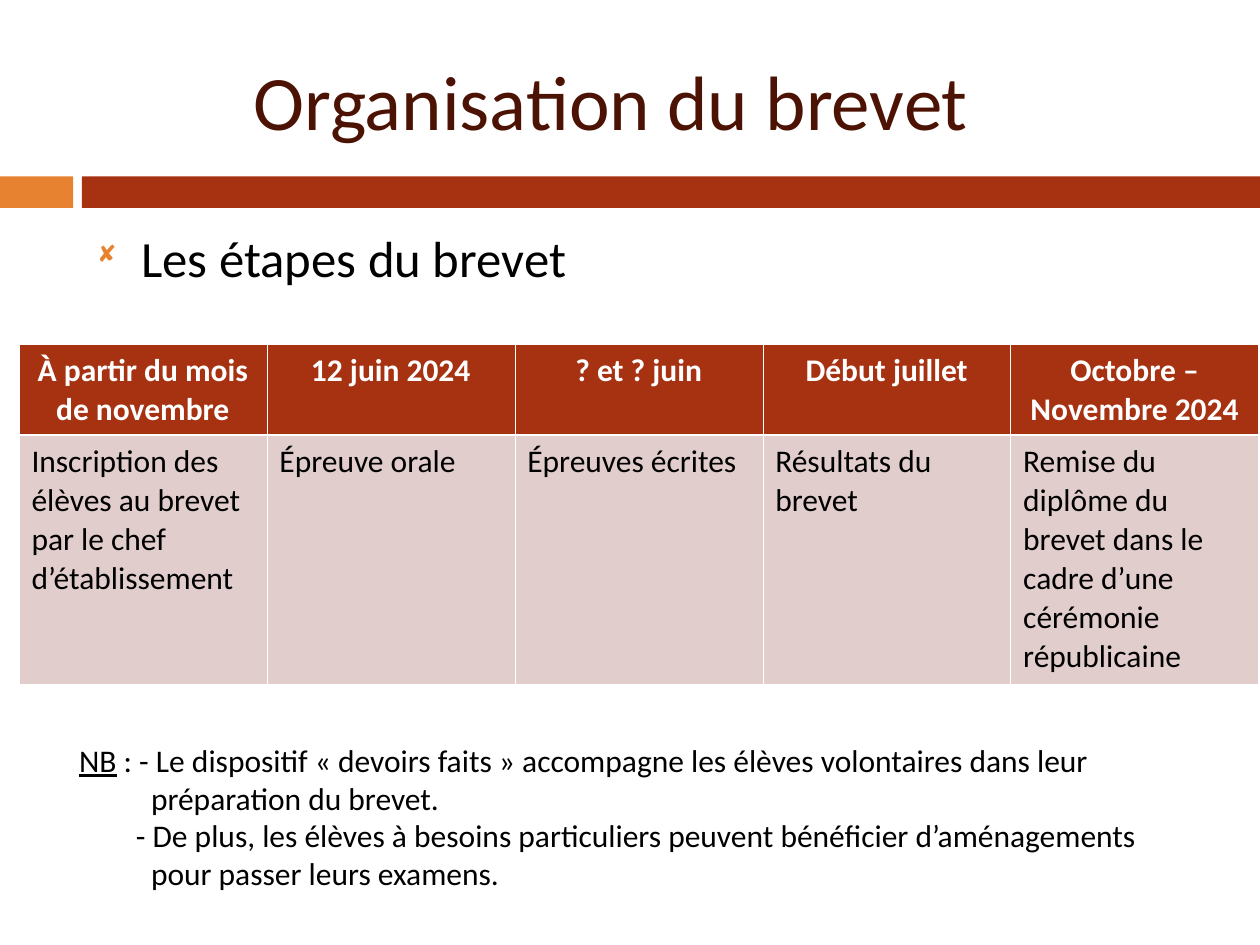
from dataclasses import dataclass

import pptx
import pptx.dml.color
import pptx.enum.shapes
import pptx.enum.text
import pptx.oxml
import pptx.oxml.ns
import pptx.util

ALIGN = pptx.enum.text.PP_ALIGN
NS = pptx.oxml.ns.nsdecls("a")


@dataclass(frozen=True)
class Theme:
    font: str = "Calibri"
    title_size: float = 44
    body_size: float = 29
    text_size: float = 18
    title: str = "4C1304"
    text: str = "000000"
    white: str = "FFFFFF"
    brick: str = "A63212"
    orange: str = "E68230"
    pale: str = "E1CDCC"
    thin: float = 0.23
    thick: float = 0.75


def rgb(value):
    return pptx.dml.color.RGBColor.from_string(value)


class Deck:
    """Style and current slide, on a grid of 100 columns by 75 rows."""

    def __init__(self, theme):
        self.theme = theme
        self.prs = pptx.Presentation()
        self.prs.slide_width = pptx.util.Inches(10)
        self.prs.slide_height = pptx.util.Inches(7.5)
        self.slide = self.prs.slides.add_slide(self.prs.slide_layouts[1])

    def cols(self, n):
        return round(self.prs.slide_width * n / 100)

    def rows(self, n):
        return round(self.prs.slide_height * n / 75)

    def box(self, x, y, w, h):
        return self.cols(x), self.rows(y), self.cols(w), self.rows(h)

    def style(self, p, size, color, bold=False, align=ALIGN.LEFT):
        p.alignment = align
        for r in p.runs:
            r.font.name = self.theme.font
            r.font.size = pptx.util.Pt(size)
            r.font.bold = bold
            r.font.color.rgb = rgb(color)

    def indent(self, p, left, first=0):
        """Indent a paragraph by grid columns."""
        pPr = p._p.get_or_add_pPr()
        pPr.set("marL", str(self.cols(left)))
        pPr.set("indent", str(self.cols(first)))

    def bar(self, x, y, w, h, color):
        kind = pptx.enum.shapes.MSO_SHAPE.RECTANGLE
        sp = self.slide.shapes.add_shape(kind, *self.box(x, y, w, h))
        sp.shadow.inherit = False
        sp.fill.solid()
        sp.fill.fore_color.rgb = rgb(color)
        sp.line.fill.background()

    def fill_placeholder(self, sp, box, text, anchor):
        sp.left, sp.top, sp.width, sp.height = self.box(*box)
        tf = sp.text_frame
        tf.text = text
        tf.auto_size = pptx.enum.text.MSO_AUTO_SIZE.NONE
        tf.vertical_anchor = anchor
        return tf.paragraphs[0]

    def title(self, text, box, left):
        p = self.fill_placeholder(self.slide.shapes.title, box, text,
                                  pptx.enum.text.MSO_ANCHOR.MIDDLE)
        self.style(p, self.theme.title_size, self.theme.title)
        self.indent(p, left)

    def bullet(self, text, box):
        p = self.fill_placeholder(self.slide.placeholders[1], box, text,
                                  pptx.enum.text.MSO_ANCHOR.TOP)
        self.style(p, self.theme.body_size, self.theme.text)
        self.indent(p, 3.5, -3.5)
        p.space_before = pptx.util.Pt(7)
        for xml in (f'<a:buClr {NS}><a:srgbClr val="{self.theme.orange}"/></a:buClr>',
                    f'<a:buSzPct {NS} val="60000"/>',
                    f'<a:buFont {NS} typeface="Wingdings"/>',
                    f'<a:buChar {NS} char="◻"/>'):
            p._p.pPr.append(pptx.oxml.parse_xml(xml))

    def borders(self, cell, **widths):
        tcPr = cell._tc.get_or_add_tcPr()
        for i, (side, width) in enumerate(widths.items()):
            tcPr.insert(i, pptx.oxml.parse_xml(
                f'<a:ln{side} {NS} w="{pptx.util.Pt(width)}"><a:solidFill>'
                f'<a:srgbClr val="{self.theme.white}"/></a:solidFill></a:ln{side}>'))

    def table(self, steps, x, y, w, heights):
        """Draw a heading row above a text row, one column per step."""
        t = self.theme
        frame = self.slide.shapes.add_table(2, len(steps), *self.box(x, y, w, sum(heights)))
        tbl = frame.table
        for row, height in zip(tbl.rows, heights):
            row.height = self.rows(height)
        looks = ((t.brick, t.white, True, ALIGN.CENTER, t.thin, t.thick),
                 (t.pale, t.text, False, ALIGN.LEFT, t.thick, t.thin))
        for c, step in enumerate(steps):
            for r, (fill, color, bold, align, top, bottom) in enumerate(looks):
                cell = tbl.cell(r, c)
                cell.text = step[r]
                cell.fill.solid()
                cell.fill.fore_color.rgb = rgb(fill)
                self.borders(cell, L=t.thin, R=t.thin, T=top, B=bottom)
                p = cell.text_frame.paragraphs[0]
                p.line_spacing = 1.02
                self.style(p, t.text_size, color, bold, align)

    def note(self, label, lines, box):
        """Write (text, indent) lines, the first after an underlined label."""
        tf = self.slide.shapes.add_textbox(*self.box(*box)).text_frame
        tf.word_wrap = True
        for i, (text, left) in enumerate(lines):
            p = tf.add_paragraph() if i else tf.paragraphs[0]
            if i == 0:
                r = p.add_run()
                r.text = label
                r.font.underline = True
            p.add_run().text = text
            self.style(p, self.theme.text_size, self.theme.text, align=ALIGN.JUSTIFY)
            self.indent(p, left)


def main():
    theme = Theme()
    deck = Deck(theme)
    deck.bar(0, 14, 5.8, 2.5, theme.orange)
    deck.bar(6.5, 14, 93.5, 2.5, theme.brick)
    deck.title("Organisation du brevet", (6.7, 2.5, 89.1, 10.8), left=12.4)
    deck.bullet("Les étapes du brevet", (6.7, 17.5, 89.1, 49.1))
    deck.table([
        ("À partir du mois de novembre",
         "Inscription des élèves au brevet par le chef d’établissement"),
        ("12 juin 2024", "Épreuve orale"),
        ("? et ? juin", "Épreuves écrites"),
        ("Début juillet", "Résultats du brevet"),
        ("Octobre – Novembre 2024",
         "Remise du diplôme du brevet dans le cadre d’une cérémonie républicaine"),
    ], 1.5, 27.3, 98.4, (7.1, 19.8))
    deck.note("NB", [
        (" : - Le dispositif « devoirs faits » accompagne les élèves volontaires dans leur", 0),
        ("préparation du brevet.", 5.7),
        ("- De plus, les élèves à besoins particuliers peuvent bénéficier d’aménagements", 4.5),
        ("pour passer leurs examens.", 5.7),
    ], (5.3, 58.3, 89.5, 13))
    deck.prs.save("out.pptx")


if __name__ == "__main__":
    main()
